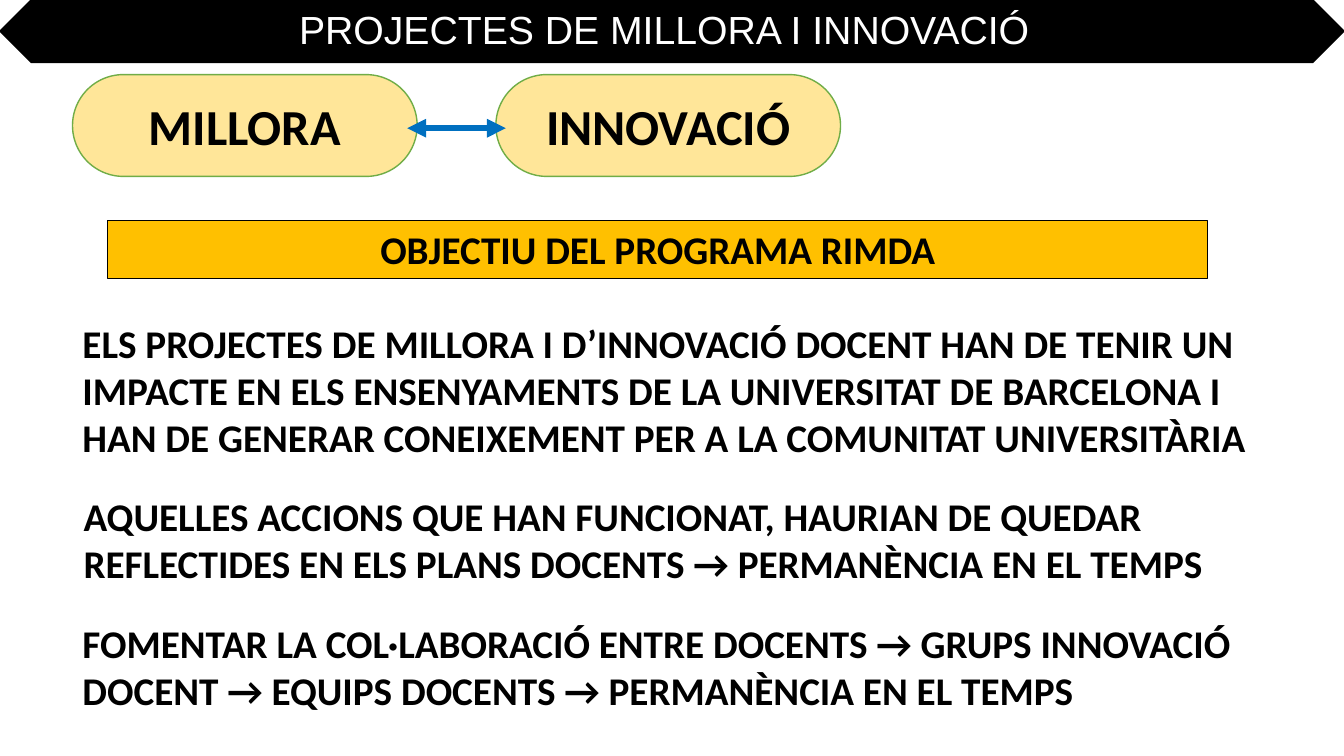
"""Build the slide on the aims of the improvement and innovation projects."""
import pptx
import pptx.util
import pptx.dml.color
import pptx.enum.shapes
import pptx.enum.text
import pptx.oxml

Pt = pptx.util.Pt
SHAPE = pptx.enum.shapes.MSO_SHAPE
ALIGN = pptx.enum.text.PP_ALIGN
ANCHOR = pptx.enum.text.MSO_ANCHOR

COLORS = {"black": "000000", "white": "FFFFFF", "cream": "FFE699",
          "green": "70AD47", "blue": "0070C0", "amber": "FFC000"}
TITLE = "PROJECTES DE MILLORA I INNOVACIÓ"
PILLS = ["MILLORA", "INNOVACIÓ"]
OBJECTIVE = "OBJECTIU DEL PROGRAMA RIMDA"
AIMS = [
    (51.8, 224.6, 108.7, "ELS PROJECTES DE MILLORA I D’INNOVACIÓ DOCENT HAN DE TENIR UN "
     "IMPACTE EN ELS ENSENYAMENTS DE LA UNIVERSITAT DE BARCELONA I "
     "HAN DE GENERAR CONEIXEMENT PER A LA COMUNITAT UNIVERSITÀRIA"),
    (52.6, 347.8, 74.9, "AQUELLES ACCIONS QUE HAN FUNCIONAT, HAURIAN DE QUEDAR "
     "REFLECTIDES EN ELS PLANS DOCENTS → PERMANÈNCIA EN EL TEMPS"),
    (51.8, 438.5, 74.9, "FOMENTAR LA COL·LABORACIÓ ENTRE DOCENTS → GRUPS INNOVACIÓ "
     "DOCENT → EQUIPS DOCENTS → PERMANÈNCIA EN EL TEMPS"),
]
PILL_LEFT, PILL_TOP, PILL_WIDTH, PILL_HEIGHT, PILL_GAP = 51.8, 53.3, 246.2, 72.7, 56.2
ARROW_Y, ARROW_OVERLAP = 91.6, 7.1


def rgb(name):
    """Return the named colour."""
    return pptx.dml.color.RGBColor.from_string(COLORS[name])


def write(sp, text, size=28, font="Calibri", color="black", bold=True,
          align=ALIGN.LEFT, anchor=ANCHOR.TOP):
    """Put one formatted paragraph into a shape."""
    tf = sp.text_frame
    tf.word_wrap = True
    tf.vertical_anchor = anchor
    tf.text = text
    p = tf.paragraphs[0]
    p.alignment = align
    f = p.runs[0].font
    f.size, f.name, f.bold = Pt(size), font, bold
    f.color.rgb = rgb(color)


def add_box(s, kind, box, fill, line, width=1):
    """Add a filled and outlined preset shape."""
    sp = s.shapes.add_shape(kind, *map(Pt, box))
    sp.shadow.inherit = False
    sp.fill.solid()
    sp.fill.fore_color.rgb = rgb(fill)
    sp.line.color.rgb = rgb(line)
    sp.line.width = Pt(width)
    for i in range(len(sp.adjustments)):
        sp.adjustments[i] = 0.5
    return sp


def add_double_arrow(s, x1, x2, y):
    """Add a horizontal line with an arrowhead at both ends."""
    cx = s.shapes.add_connector(pptx.enum.shapes.MSO_CONNECTOR.STRAIGHT,
                                Pt(x1), Pt(y), Pt(x2), Pt(y))
    cx.line.color.rgb = rgb("blue")
    cx.line.width = Pt(4.5)
    ln = cx.line._get_or_add_ln()
    for tag in ("a:headEnd", "a:tailEnd"):
        end = pptx.oxml.xmlchemy.OxmlElement(tag)
        end.set("type", "triangle")
        ln.append(end)
    cx._element.spPr.append(pptx.oxml.xmlchemy.OxmlElement("a:effectLst"))


def main():
    """Draw the slide and save it."""
    prs = pptx.Presentation()
    prs.slide_width, prs.slide_height = Pt(960), Pt(540)
    s = prs.slides.add_slide(prs.slide_layouts[6])

    add_box(s, SHAPE.SNIP_2_DIAG_RECTANGLE, (0, 0, 960, 44.6), "black", "black")
    title = s.shapes.add_textbox(Pt(206.6), Pt(0), Pt(547.2), Pt(44.6))
    write(title, TITLE, font="Arial", color="white", bold=False)

    for i, label in enumerate(PILLS):
        left = PILL_LEFT + i * (PILL_WIDTH + PILL_GAP)
        pill = add_box(s, SHAPE.ROUNDED_RECTANGLE,
                       (left, PILL_TOP, PILL_WIDTH, PILL_HEIGHT), "cream", "green")
        write(pill, label, size=36, align=ALIGN.CENTER, anchor=ANCHOR.MIDDLE)
    gap_left = PILL_LEFT + PILL_WIDTH
    add_double_arrow(s, gap_left - ARROW_OVERLAP, gap_left + PILL_GAP + ARROW_OVERLAP, ARROW_Y)

    bar = add_box(s, SHAPE.RECTANGLE, (77, 157.5, 785.5, 41.2), "amber", "black", 0.75)
    write(bar, OBJECTIVE, align=ALIGN.CENTER)

    for left, top, height, text in AIMS:
        write(s.shapes.add_textbox(Pt(left), Pt(top), Pt(855.4), Pt(height)), text)

    prs.save("out.pptx")


if __name__ == "__main__":
    main()
